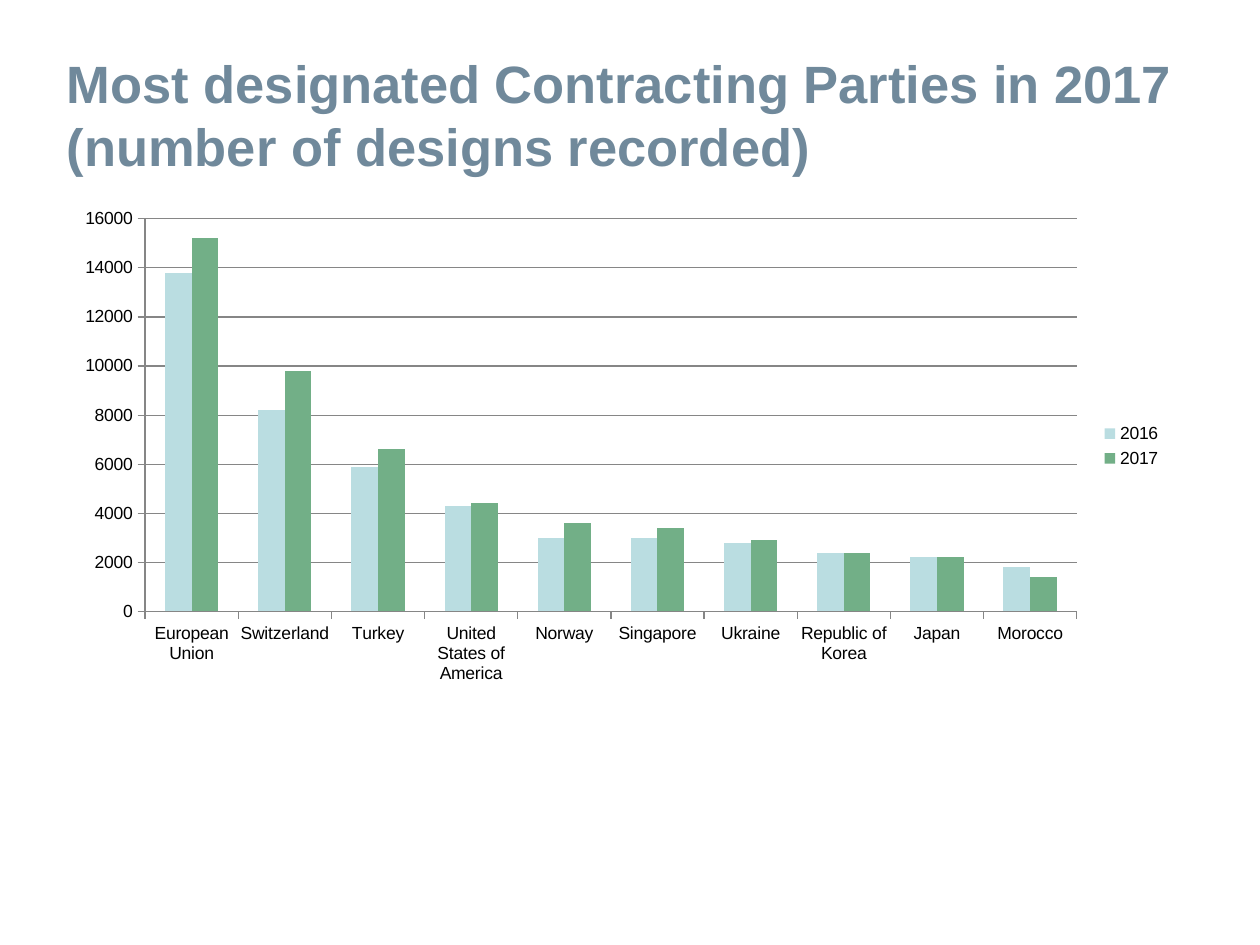
"""Build a slide charting the most designated Contracting Parties in 2017."""
from pptx import Presentation
from pptx import util as u
from pptx.chart.data import CategoryChartData
from pptx.dml.color import RGBColor
from pptx.enum import chart as ch
from pptx.enum import text

SLATE = RGBColor(0x70, 0x89, 0x9B)
PALE_BLUE = RGBColor(0xBA, 0xDD, 0xE1)
GREEN = RGBColor(0x72, 0xAF, 0x87)
GRAY = RGBColor(0x86, 0x86, 0x86)
BLACK = RGBColor(0, 0, 0)

DESIGNS = {
    "European Union": (13800, 15200),
    "Switzerland": (8200, 9800),
    "Turkey": (5900, 6600),
    "United States of America": (4300, 4400),
    "Norway": (3000, 3600),
    "Singapore": (3000, 3400),
    "Ukraine": (2800, 2900),
    "Republic of Korea": (2400, 2400),
    "Japan": (2200, 2200),
    "Morocco": (1800, 1400),
}
YEARS = {"2016": PALE_BLUE, "2017": GREEN}

deck = Presentation()
deck.slide_width, deck.slide_height = u.Inches(10), u.Inches(7.5)
slide = deck.slides.add_slide(deck.slide_layouts[5])

heading = slide.shapes.title
heading_place = {"left": 0.43, "top": 0.28, "width": 9, "height": 1.25}
for side, inches in heading_place.items():
    setattr(heading, side, u.Inches(inches))
frame = heading.text_frame
frame.text = "Most designated Contracting Parties in 2017\v(number of designs recorded)"
frame_format = {
    "word_wrap": True,
    "auto_size": text.MSO_AUTO_SIZE.NONE,
    "vertical_anchor": text.MSO_ANCHOR.MIDDLE,
}
for name, value in frame_format.items():
    setattr(frame, name, value)
heading_line = frame.paragraphs[0]
heading_line.alignment = text.PP_ALIGN.LEFT
for run in heading_line.runs:
    for name, value in {"size": u.Pt(30), "name": "Arial", "bold": True}.items():
        setattr(run.font, name, value)
    run.font.color.rgb = SLATE

designs_data = CategoryChartData(number_format="General")
designs_data.categories = list(DESIGNS)
for year, counts in zip(YEARS, zip(*DESIGNS.values())):
    designs_data.add_series(year, counts)
designs = slide.shapes.add_chart(
    ch.XL_CHART_TYPE.COLUMN_CLUSTERED,
    u.Inches(0.5), u.Inches(1.58), u.Inches(8.82), u.Inches(3.92),
    designs_data,
).chart
designs.has_title = False
for name, value in {"size": u.Pt(10), "name": "Arial", "bold": False}.items():
    setattr(designs.font, name, value)
designs.font.color.rgb = BLACK

designs.has_legend = True
designs.legend.position = ch.XL_LEGEND_POSITION.RIGHT
designs.legend.include_in_layout = False

bars = designs.plots[0]
for name, value in {"gap_width": 150, "overlap": 0, "vary_by_categories": False}.items():
    setattr(bars, name, value)
for year_bars, color in zip(bars.series, YEARS.values()):
    year_bars.format.fill.solid()
    year_bars.format.fill.fore_color.rgb = color

parties, counts_axis = designs.category_axis, designs.value_axis
counts_scale = {
    "minimum_scale": 0,
    "maximum_scale": 16000,
    "major_unit": 2000,
    "has_major_gridlines": True,
}
for name, value in counts_scale.items():
    setattr(counts_axis, name, value)
for axis in (parties, counts_axis):
    axis.major_tick_mark = ch.XL_TICK_MARK.OUTSIDE
    axis.minor_tick_mark = ch.XL_TICK_MARK.NONE
for ruled in (parties, counts_axis, counts_axis.major_gridlines):
    ruled.format.line.color.rgb = GRAY
    ruled.format.line.width = u.Pt(0.75)

deck.save("out.pptx")
